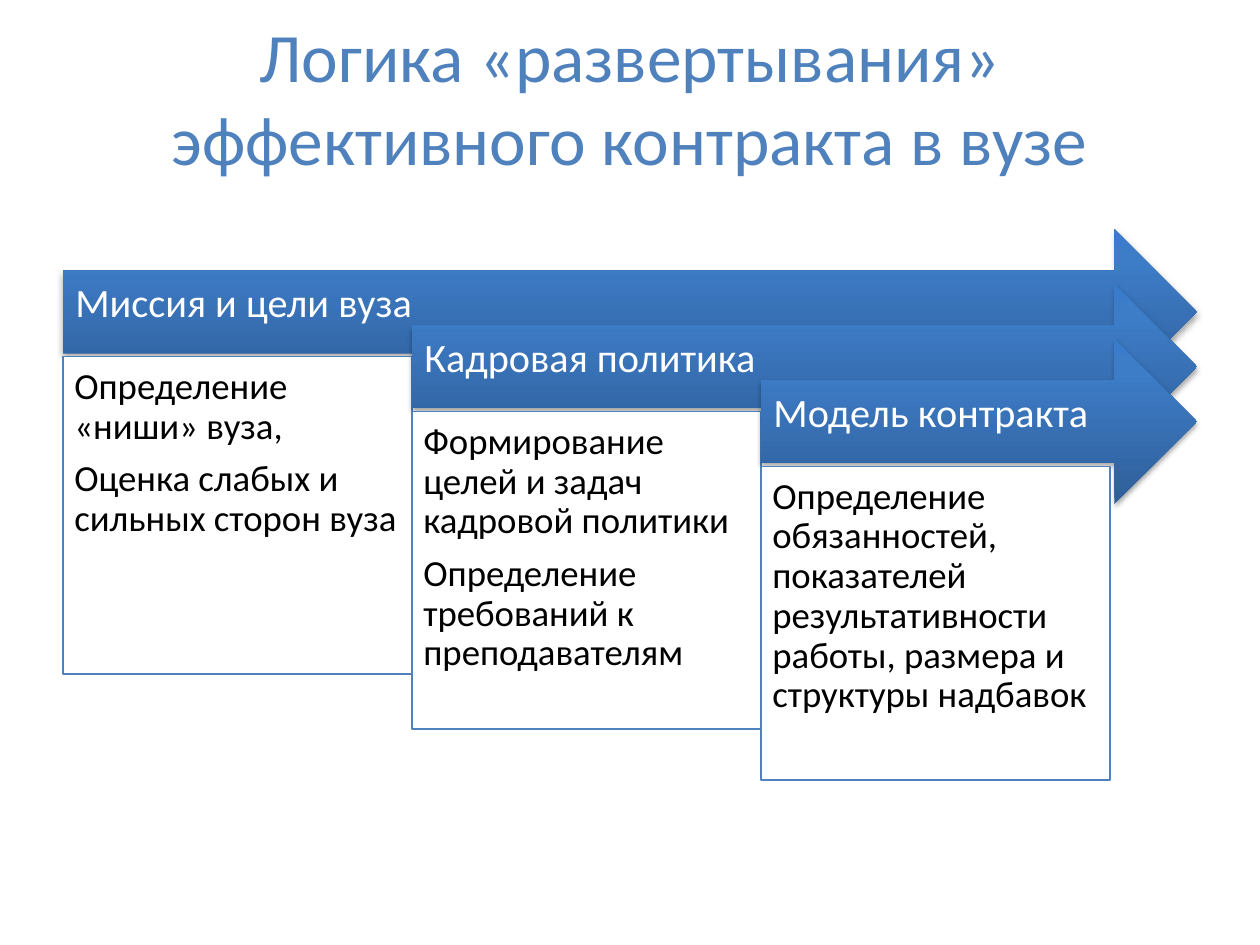
import copy

import pptx
import pptx.dml.color
import pptx.enum.shapes
import pptx.enum.text
import pptx.oxml.ns
import pptx.util
from lxml import etree

Inches = pptx.util.Inches
Pt = pptx.util.Pt
RGB = pptx.dml.color.RGBColor.from_string
SHAPE = pptx.enum.shapes.MSO_SHAPE
ALIGN = pptx.enum.text.PP_ALIGN
ANCHOR = pptx.enum.text.MSO_ANCHOR
qn = pptx.oxml.ns.qn

COLORS = {
    "accent": "4F81BD",
    "white": "FFFFFF",
    "black": "000000",
}
ARROW_STOPS = [(0, "2F5F99"), (0.8, "3D7CC7"), (1, "3A7CCB")]


def write(sp, paragraphs, size, color, insets=(0.1, 0.05, 0.1, 0.05),
          anchor=ANCHOR.TOP, align=ALIGN.LEFT, spacing=1.0, after=0):
    """Fill a shape with text; insets are left, top, right, bottom in inches."""
    tf = sp.text_frame
    tf.word_wrap = True
    tf.vertical_anchor = anchor
    tf.margin_left, tf.margin_top, tf.margin_right, tf.margin_bottom = map(Inches, insets)
    for i, text in enumerate(paragraphs):
        p = tf.paragraphs[0] if i == 0 else tf.add_paragraph()
        p.alignment = align
        p.line_spacing = spacing
        p.space_after = Pt(after)
        r = p.add_run()
        r.text = text
        r.font.name = "Calibri"
        r.font.size = Pt(size)
        r.font.color.rgb = RGB(COLORS[color])


def style_arrow(sp):
    """Give an arrow its three-stop gradient and soft shadow below."""
    sp.line.fill.background()
    sp.fill.gradient()
    sp.fill.gradient_angle = 90
    spPr = sp._element.spPr
    stops = spPr.find(".//" + qn("a:gsLst"))
    stops.insert(1, copy.deepcopy(stops[0]))
    for stop, (position, color) in zip(sp.fill.gradient_stops, ARROW_STOPS):
        stop.position = position
        stop.color.rgb = RGB(color)
    sp.shadow.inherit = False
    shadow = etree.SubElement(
        spPr.find(qn("a:effectLst")), qn("a:outerShdw"),
        blurRad=str(Pt(3.1)), dist=str(Pt(1.8)), dir="5400000", rotWithShape="0")
    color = etree.SubElement(shadow, qn("a:srgbClr"), val=COLORS["black"])
    etree.SubElement(color, qn("a:alpha"), val="35000")


prs = pptx.Presentation()
prs.slide_width, prs.slide_height = Inches(10), Inches(7.5)
s = prs.slides.add_slide(prs.slide_layouts[6])

title = s.shapes.add_textbox(Inches(0.5), Inches(0.14), Inches(9), Inches(1.25))
write(title, ["Логика «развертывания» эффективного контракта в вузе"], 39.6, "accent",
      anchor=ANCHOR.MIDDLE, align=ALIGN.CENTER)

# Each stage starts one box further right and a step lower; all arrows end together.
LEFT, TOP, RIGHT = 0.5, 1.82, 9.5
BOX_W, STEP_Y = 2.77, 0.435
ARROW_H, BOX_DROP = 1.31, 1.01
stages = [
    ("Миссия и цели вуза", 2.52,
     ["Определение «ниши» вуза,", "Оценка слабых и сильных сторон вуза"]),
    ("Кадровая политика", 2.52,
     ["Формирование целей и задач кадровой политики",
      "Определение требований к преподавателям"]),
    ("Модель контракта", 2.49,
     ["Определение обязанностей, показателей результативности работы, "
      "размера и структуры надбавок"]),
]

for i, (heading, box_h, details) in enumerate(stages):
    x, y = LEFT + i * BOX_W, TOP + i * STEP_Y

    arrow = s.shapes.add_shape(SHAPE.RIGHT_ARROW, Inches(x), Inches(y),
                               Inches(RIGHT - x), Inches(ARROW_H))
    style_arrow(arrow)
    write(arrow, [heading], 23, "white", insets=(0.1, 0.1, 0.28, 0.21),
          anchor=ANCHOR.MIDDLE, spacing=0.9, after=8)

    box = s.shapes.add_shape(SHAPE.RECTANGLE, Inches(x), Inches(y + BOX_DROP),
                             Inches(BOX_W), Inches(box_h))
    box.shadow.inherit = False
    box.fill.solid()
    box.fill.fore_color.rgb = RGB(COLORS["white"])
    box.line.color.rgb = RGB(COLORS["accent"])
    box.line.width = Pt(0.75)
    write(box, details, 21, "black", insets=(0.09,) * 4, spacing=0.9, after=7.35)

prs.save("out.pptx")
